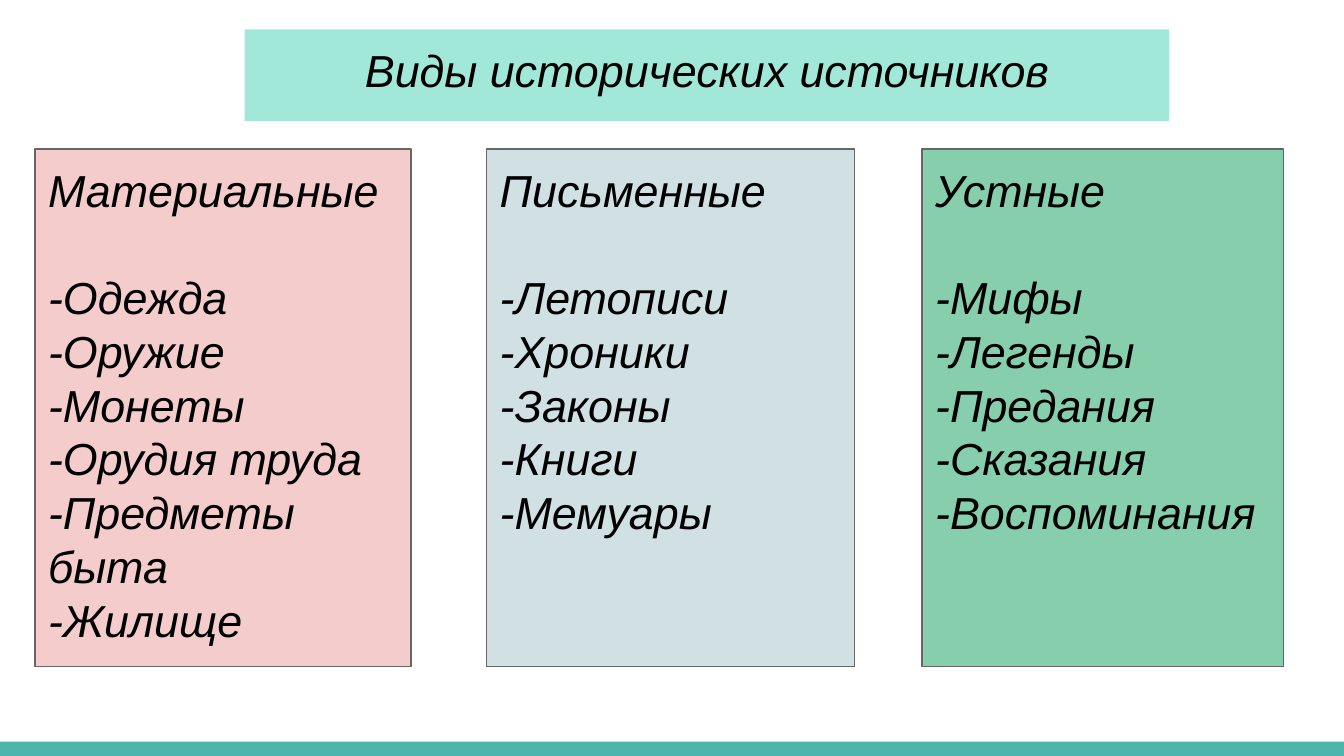
from pptx import Presentation
from pptx.dml.color import RGBColor as Rgb
from pptx.enum.shapes import MSO_SHAPE as Shape
from pptx.enum.text import MSO_ANCHOR as Anchor, PP_ALIGN as Align
from pptx.util import Inches, Pt

COLORS = {
    "text": "000000",
    "edge": "666666",
    "foot": "4DB6AC",
    "title": "A1E8D9",
    "pink": "F4CCCC",
    "grey": "D0E0E3",
    "green": "87CEAC",
}
WIDE = Inches(10)
HIGH = WIDE * 9 // 16
COL, ROW = WIDE / 100, HIGH / 100  # grid of 100 columns by 100 rows
LEAD = 28.8  # line pitch in points

TOP, TALL = 19.7, 68.5  # rows shared by the cards
# Left column, width in columns, fill, heading, items
CARDS = [
    (2.6, 28, "pink", "Материальные",
     ["Одежда", "Оружие", "Монеты", "Орудия труда", "Предметы быта", "Жилище"]),
    (36.2, 27.4, "grey", "Письменные",
     ["Летописи", "Хроники", "Законы", "Книги", "Мемуары"]),
    (68.6, 26.9, "green", "Устные",
     ["Мифы", "Легенды", "Предания", "Сказания", "Воспоминания"]),
]


def color(name):
    return Rgb.from_string(COLORS[name])


def add_box(slide, box, fill, edge=None):
    x, y, w, h = box
    rect = slide.shapes.add_shape(
        Shape.RECTANGLE, round(x * COL), round(y * ROW), round(w * COL), round(h * ROW))
    rect.shadow.inherit = False
    rect.fill.solid()
    rect.fill.fore_color.rgb = color(fill)
    if edge:
        rect.line.color.rgb = color(edge)
        rect.line.width = Pt(0.75)
    else:
        rect.line.fill.background()
    return rect


def add_text(rect, lines, size=24, align=Align.LEFT, gap=0):
    """Write the lines into a box, with a gap in points after the first."""
    frame = rect.text_frame
    frame.word_wrap = True
    frame.vertical_anchor = Anchor.TOP
    frame.margin_left = frame.margin_right = Inches(0.1)
    frame.margin_top = frame.margin_bottom = Inches(0.1)
    for i, line in enumerate(lines):
        para = frame.add_paragraph() if i else frame.paragraphs[0]
        para.alignment = align
        para.line_spacing = Pt(LEAD)
        para.space_before = Pt(0)
        para.space_after = Pt(0 if i else gap)
        run = para.add_run()
        run.text = line
        font = run.font
        font.name, font.size, font.italic = "Arial", Pt(size), True
        font.color.rgb = color("text")


def add_title(slide, box, text):
    add_text(add_box(slide, box, "title"), [text], align=Align.CENTER)


def add_card(slide, box, fill, head, items):
    rect = add_box(slide, box, fill, edge="edge")
    add_text(rect, [head] + [f"-{item}" for item in items], gap=LEAD)


def main():
    deck = Presentation()
    deck.slide_width, deck.slide_height = WIDE, HIGH
    slide = deck.slides.add_slide(deck.slide_layouts[6])

    # Bottom strip
    add_box(slide, (0, 98.1, 100, 1.9), "foot")

    # Title
    add_title(slide, (18.2, 3.9, 68.8, 12.1), "Виды исторических источников")

    # Three kinds of sources
    for left, width, fill, head, items in CARDS:
        add_card(slide, (left, TOP, width, TALL), fill, head, items)

    deck.save("out.pptx")


if __name__ == "__main__":
    main()
